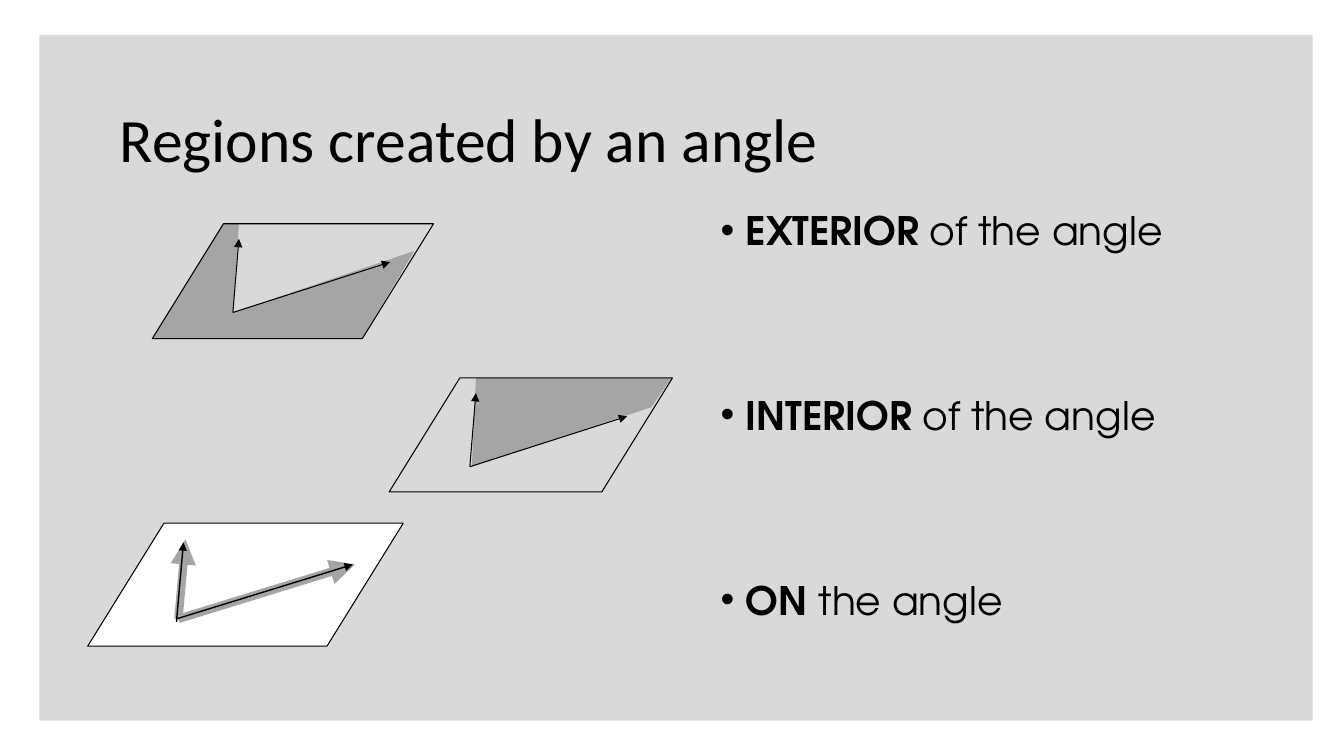
from lxml import etree
from pptx import Presentation
from pptx.dml.color import RGBColor
from pptx.enum.shapes import MSO_CONNECTOR, MSO_SHAPE
from pptx.enum.text import MSO_ANCHOR
from pptx.oxml.ns import qn
from pptx.util import Pt

PX = 9144
RECTANGLE = MSO_SHAPE.RECTANGLE
PARALLELOGRAM = MSO_SHAPE.PARALLELOGRAM
STRAIGHT = MSO_CONNECTOR.STRAIGHT
MIDDLE = MSO_ANCHOR.MIDDLE
BLACK, GREY, WHITE = "000000", "A5A5A5", "FFFFFF"
TITLE_FONT, BODY_FONT = "Calibri", "TeX Gyre Adventor"

BULLETS = [
    ("EXTERIOR", " of the angle"),
    ("INTERIOR", " of the angle"),
    ("ON ", "the angle"),
]
THIN_RAYS = [
    ((80, 88), (236, 38), BLACK, 0.75),
    ((80, 88), (86, 15), BLACK, 0.75),
]
HIGHLIGHTED_RAYS = [
    ((90, 95), (265, 41), GREY, 6),
    ((90, 95), (97, 16), GREY, 6),
    ((88, 95), (263, 41), BLACK, 1),
    ((88, 98), (95, 19), BLACK, 1),
]
EXTERIOR = [(260, 27), (80, 88), (86, 0), (70, 0), (0, 114), (208, 114)]
INTERIOR = [(86, 0), (82, 88), (260, 29), (280, 0)]
PLANES = [
    ((151, 222, 279, 114), THIN_RAYS, EXTERIOR, None),
    ((386, 375, 281, 113), THIN_RAYS, INTERIOR, None),
    ((87, 519, 313, 122), HIGHLIGHTED_RAYS, None, WHITE),
]


def px(*lengths):
    """Turn px lengths into EMU."""
    return [length * PX for length in lengths]


def color(hex_string):
    """Return the colour for a hex string."""
    return RGBColor.from_string(hex_string)


def add_panel(slide, box):
    """Draw the translucent black panel behind the content."""
    panel = slide.shapes.add_shape(RECTANGLE, *px(*box))
    panel.shadow.inherit = False
    panel.line.fill.background()
    panel.fill.solid()
    panel.fill.fore_color.rgb = color(BLACK)
    fill_color = panel.fill._xPr.find(qn("a:solidFill"))[0]
    etree.SubElement(fill_color, qn("a:alpha"), val="15000")


def format_run(run, font_name, size, bold=False):
    """Set the font of a run."""
    run.font.name = font_name
    run.font.size = Pt(size)
    run.font.bold = bold
    run.font.color.rgb = color(BLACK)


def add_title(slide, box, text):
    """Write the slide title."""
    text_frame = slide.shapes.add_textbox(*px(*box)).text_frame
    text_frame.word_wrap = True
    text_frame.vertical_anchor = MIDDLE
    text_frame.text = text
    paragraph = text_frame.paragraphs[0]
    paragraph.line_spacing = 0.9
    format_run(paragraph.runs[0], TITLE_FONT, 44)


def add_bullets(slide, box, bullets):
    """Write widely spaced bullets, each with a bold start."""
    text_frame = slide.shapes.add_textbox(*px(*box)).text_frame
    text_frame.word_wrap = True
    for index, parts in enumerate(bullets):
        paragraph = text_frame.add_paragraph() if index else text_frame.paragraphs[0]
        paragraph.line_spacing = 0.8
        paragraph.space_before = Pt(99 if index else 0)
        paragraph.space_after = Pt(6)
        properties = paragraph._p.get_or_add_pPr()
        properties.set("marL", str(38 * PX))
        properties.set("indent", str(-25 * PX))
        etree.SubElement(properties, qn("a:buFont"), typeface="Arial")
        etree.SubElement(properties, qn("a:buChar"), char="•")
        for part, bold in zip(parts, (True, False)):
            run = paragraph.add_run()
            run.text = part
            format_run(run, BODY_FONT, 28, bold)


def add_region(shapes, points):
    """Shade the polygon through the given points."""
    builder = shapes.build_freeform(*px(*points[0]))
    builder.add_line_segments([px(*point) for point in points[1:]], close=True)
    region = builder.convert_to_shape()
    region.shadow.inherit = False
    region.fill.solid()
    region.fill.fore_color.rgb = color(GREY)
    region.line.fill.background()


def add_ray(shapes, start, end, line_color, width):
    """Draw a ray with an arrowhead at its end."""
    ray = shapes.add_connector(STRAIGHT, *px(*start, *end))
    ray.line.color.rgb = color(line_color)
    ray.line.width = Pt(width)
    etree.SubElement(ray.line._get_or_add_ln(), qn("a:tailEnd"), type="triangle")
    etree.SubElement(ray._element.spPr, qn("a:effectLst"))


def add_angle_plane(slide, box, rays, region, fill):
    """Draw a plane with an angle and, if given, a shaded region."""
    left, top = box[:2]

    def place(point):
        """Move a point from the box to the slide."""
        return left + point[0], top + point[1]

    shapes = slide.shapes.add_group_shape().shapes
    if region:
        add_region(shapes, [place(point) for point in region])
    plane = shapes.add_shape(PARALLELOGRAM, *px(*box))
    plane.adjustments[0] = 0.62
    plane.shadow.inherit = False
    plane.line.color.rgb = color(BLACK)
    plane.line.width = Pt(0.75)
    if fill:
        plane.fill.solid()
        plane.fill.fore_color.rgb = color(fill)
    else:
        plane.fill.background()
    for start, end, line_color, width in rays:
        add_ray(shapes, place(start), place(end), line_color, width)


def main():
    """Build and save the slide."""
    presentation = Presentation()
    presentation.slide_width, presentation.slide_height = px(1333, 750)
    slide = presentation.slides.add_slide(presentation.slide_layouts[6])
    add_panel(slide, (39, 35, 1263, 680))
    add_title(slide, (109, 72, 1122, 138), "Regions created by an angle")
    add_bullets(slide, (692, 209, 530, 444), BULLETS)
    for plane in PLANES:
        add_angle_plane(slide, *plane)
    presentation.save("out.pptx")


if __name__ == "__main__":
    main()
